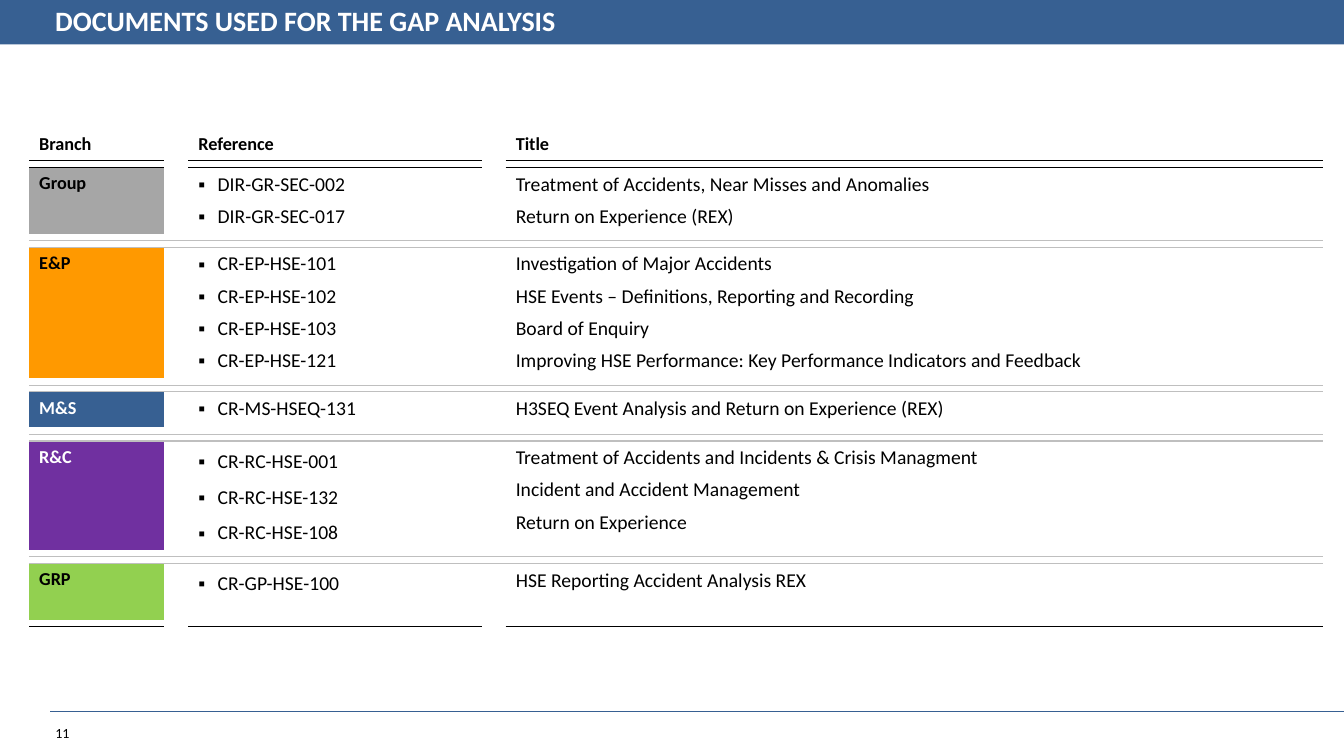
from lxml.etree import SubElement
from pptx import Presentation
from pptx.dml.color import RGBColor
from pptx.enum.shapes import MSO_CONNECTOR as CONNECTOR, MSO_SHAPE as SHAPE
from pptx.enum.text import MSO_ANCHOR as ANCHOR
from pptx.oxml.ns import qn
from pptx.util import Pt

TITLE = "DOCUMENTS USED FOR THE GAP ANALYSIS"
PAGE_NUMBER = "11"
HEADINGS = ["Branch", "Reference", "Title"]
BRANCHES = [
    {"name": "Group", "fill": "grey", "ink": "black", "height": 47.2, "spacing": None, "documents": [
        ("DIR-GR-SEC-002", "Treatment of Accidents, Near Misses and Anomalies"),
        ("DIR-GR-SEC-017", "Return on Experience (REX)")]},
    {"name": "E&P", "fill": "orange", "ink": "black", "height": 93.6, "spacing": None, "documents": [
        ("CR-EP-HSE-101", "Investigation of Major Accidents"),
        ("CR-EP-HSE-102", "HSE Events – Definitions, Reporting and Recording"),
        ("CR-EP-HSE-103", "Board of Enquiry"),
        ("CR-EP-HSE-121", "Improving HSE Performance: Key Performance Indicators and Feedback")]},
    {"name": "M&S", "fill": "blue", "ink": "white", "height": 25.4, "spacing": None, "documents": [
        ("CR-MS-HSEQ-131", "H3SEQ Event Analysis and Return on Experience (REX)")]},
    {"name": "R&C", "fill": "purple", "ink": "white", "height": 77.9, "spacing": 1.15, "documents": [
        ("CR-RC-HSE-001", "Treatment of Accidents and Incidents & Crisis Managment"),
        ("CR-RC-HSE-132", "Incident and Accident Management"),
        ("CR-RC-HSE-108", "Return on Experience")]},
    {"name": "GRP", "fill": "green", "ink": "black", "height": 40, "spacing": 1.15, "documents": [
        ("CR-GP-HSE-100", "HSE Reporting Accident Analysis REX")]},
]
COLORS = {"blue": "376092", "white": "FFFFFF", "black": "000000", "grey": "A6A6A6",
          "orange": "FF9900", "purple": "7030A0", "green": "92D050", "divider": "BFBFBF"}
FONT = "Calibri"
NO_GRID_STYLE = "{2D5ABB26-0587-4C30-8999-92F81FD0307C}"
SLIDE_WIDTH, SLIDE_HEIGHT = 960, 540
TABLE_LEFT, TABLE_TOP = 20.8, 75.4
COLUMN_WIDTHS = [96.5, 11.5, 209.5, 11.5, 584]
BRANCH_COLUMN, REFERENCE_COLUMN, TITLE_COLUMN = CONTENT_COLUMNS = [0, 2, 4]
HEADER_HEIGHT, GAP_HEIGHT = 39.5, 4.86
HANGING = 13.7


def rgb(color):
    return RGBColor.from_string(COLORS[color])


def style(paragraph, size, color="black", bold=False):
    font = paragraph.font
    font.name, font.size, font.bold = FONT, Pt(size), bold
    font.color.rgb = rgb(color)


def hang(paragraph, indent, bullet=None):
    properties = paragraph._p.get_or_add_pPr()
    properties.set("marL", str(Pt(indent)))
    properties.set("indent", str(-Pt(indent)))
    if bullet:
        SubElement(properties, qn("a:buFont"), typeface="Arial")
        SubElement(properties, qn("a:buChar"), char=bullet)


def add_label(slide, text, left, top, width, height, size, color="black", bold=False):
    frame = slide.shapes.add_textbox(Pt(left), Pt(top), Pt(width), Pt(height)).text_frame
    frame.word_wrap = True
    frame.text = text
    style(frame.paragraphs[0], size, color, bold)
    return frame


def add_border(cell, side, color):
    line = SubElement(cell._tc.get_or_add_tcPr(), qn(f"a:{side}"), w=str(Pt(1)))
    SubElement(SubElement(line, qn("a:solidFill")), qn("a:srgbClr"), val=COLORS[color])


def rule_below(table, row, columns, color):
    for column in columns:
        add_border(table.cell(row, column), "lnB", color)
        if row + 1 < len(table.rows):
            add_border(table.cell(row + 1, column), "lnT", color)


def fill_list(cell, lines, bullet=None, spacing=None):
    cell.text_frame.text = "\n".join(lines)
    for paragraph in cell.text_frame.paragraphs:
        hang(paragraph, HANGING, bullet)
        paragraph.space_after = Pt(6)
        if spacing:
            paragraph.line_spacing = spacing
        style(paragraph, 14)


def add_documents_table(slide):
    heights = [HEADER_HEIGHT, GAP_HEIGHT]
    for branch in BRANCHES:
        heights += [branch["height"], GAP_HEIGHT, GAP_HEIGHT]
    heights.pop()

    table = slide.shapes.add_table(len(heights), len(COLUMN_WIDTHS), Pt(TABLE_LEFT), Pt(TABLE_TOP),
                                   Pt(sum(COLUMN_WIDTHS)), Pt(sum(heights))).table
    table.first_row = table.horz_banding = False
    table._tbl.tblPr.find(qn("a:tableStyleId")).text = NO_GRID_STYLE
    for column, width in zip(table.columns, COLUMN_WIDTHS):
        column.width = Pt(width)
    for row, height in zip(table.rows, heights):
        row.height = Pt(height)
        for cell in row.cells:
            if height == GAP_HEIGHT:
                cell.margin_top = cell.margin_bottom = 0
            style(cell.text_frame.paragraphs[0], 1)

    branch_rows = range(2, len(heights), 3)
    rule_below(table, 0, CONTENT_COLUMNS, "black")
    for row in branch_rows[:-1]:
        rule_below(table, row + 1, range(len(COLUMN_WIDTHS)), "divider")
    rule_below(table, len(heights) - 1, CONTENT_COLUMNS, "black")
    for cell in table.iter_cells():
        cell.fill.background()

    for column, heading in zip(CONTENT_COLUMNS, HEADINGS):
        cell = table.cell(0, column)
        cell.vertical_anchor = ANCHOR.BOTTOM
        cell.text_frame.text = heading
        style(cell.text_frame.paragraphs[0], 13, bold=True)

    for row, branch in zip(branch_rows, BRANCHES):
        name_cell = table.cell(row, BRANCH_COLUMN)
        name_cell.fill.solid()
        name_cell.fill.fore_color.rgb = rgb(branch["fill"])
        name_cell.text_frame.text = branch["name"]
        style(name_cell.text_frame.paragraphs[0], 13, branch["ink"], bold=True)
        references, titles = zip(*branch["documents"])
        fill_list(table.cell(row, REFERENCE_COLUMN), references, "▪", branch["spacing"])
        fill_list(table.cell(row, TITLE_COLUMN), titles)


def main():
    deck = Presentation()
    deck.slide_width, deck.slide_height = Pt(SLIDE_WIDTH), Pt(SLIDE_HEIGHT)
    slide = deck.slides.add_slide(deck.slide_layouts[6])

    footer_rule = slide.shapes.add_connector(CONNECTOR.STRAIGHT, Pt(36), Pt(508.3),
                                             Pt(SLIDE_WIDTH), Pt(508.3))
    footer_rule.line.color.rgb = rgb("blue")
    footer_rule.line.width = Pt(0.75)
    SubElement(footer_rule._element.spPr, qn("a:effectLst"))
    add_label(slide, PAGE_NUMBER, 32.4, 514, 51, 19.4, 10)

    title_bar = slide.shapes.add_shape(SHAPE.RECTANGLE, 0, 0, Pt(SLIDE_WIDTH), Pt(31.7))
    title_bar.shadow.inherit = False
    title_bar.fill.solid()
    title_bar.fill.fore_color.rgb = rgb("blue")
    title_bar.line.fill.background()
    title = add_label(slide, TITLE, 32.4, 0, 556, 31.7, 20, "white", bold=True)
    title.vertical_anchor = ANCHOR.MIDDLE
    title.paragraphs[0].line_spacing = 0.9
    hang(title.paragraphs[0], 27)

    add_documents_table(slide)
    deck.save("out.pptx")


if __name__ == "__main__":
    main()
